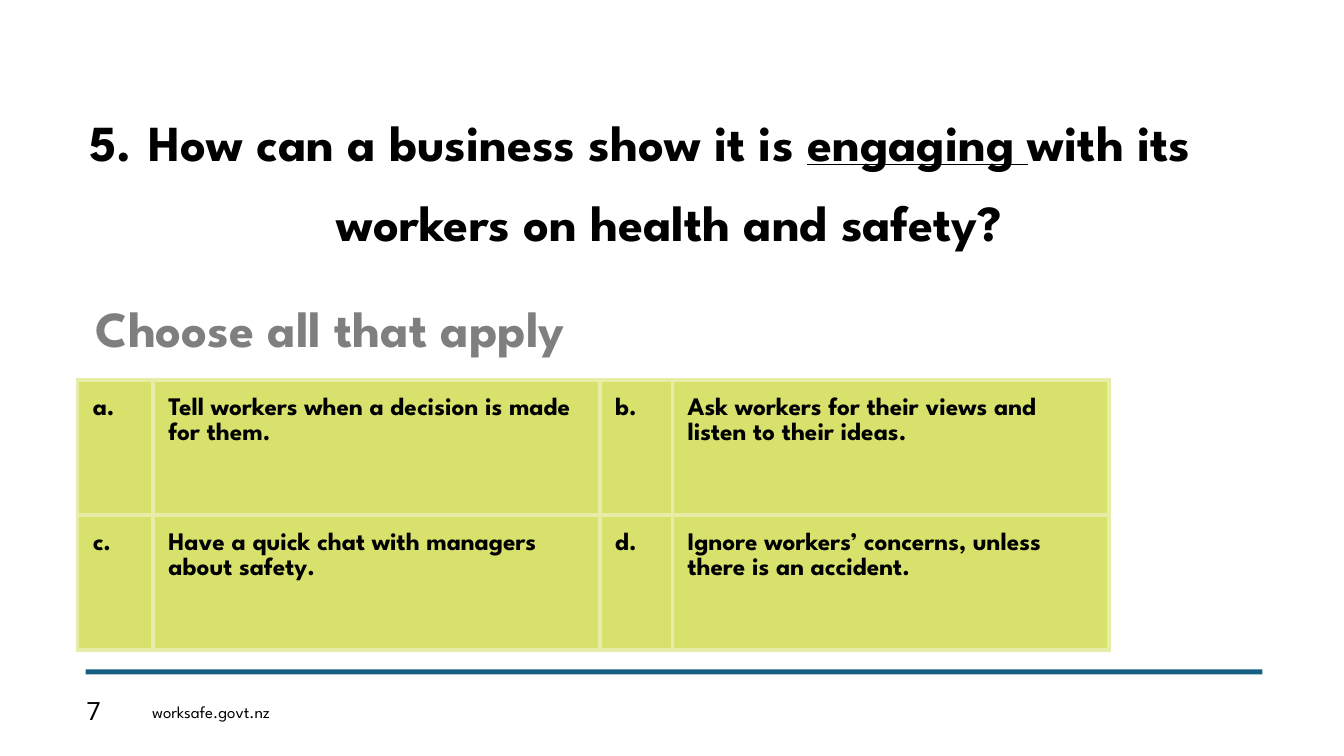
from dataclasses import dataclass

from lxml import etree
from pptx import Presentation
from pptx.dml.color import RGBColor
from pptx.enum.shapes import MSO_SHAPE
from pptx.enum.text import MSO_ANCHOR, PP_ALIGN
from pptx.oxml.ns import qn
from pptx.util import Emu, Pt

RECTANGLE = MSO_SHAPE.RECTANGLE
TOP, MIDDLE = MSO_ANCHOR.TOP, MSO_ANCHOR.MIDDLE
LEFT, CENTER = PP_ALIGN.LEFT, PP_ALIGN.CENTER
EMU_PER_PX = 9144
TITLE_ONLY = 5


@dataclass(frozen=True)
class Theme:
    """Colours, fonts and type sizes of the quiz slide."""
    text: str = "000000"
    prompt: str = "7F7F7F"
    rule: str = "156082"
    cell: str = "D7E16C"
    border: str = "E7EDA7"
    font: str = "League Spartan"
    number_font: str = "Roboto"
    heading_size: int = 36
    answer_size: int = 18
    footer_size: int = 12
    heading_spacing: float = 1.32
    answer_spacing: float = 1.1
    border_width: int = 3


THEME = Theme()
QUESTION = (
    ("How can a business show it is ", False),
    ("engaging ", True),
    ("with its workers on health and safety?", False),
)
ANSWERS = (
    ("a.", "Tell workers when a decision is made for them.",
     "b.", "Ask workers for their views and listen to their ideas."),
    ("c.", "Have a quick chat with managers about safety.",
     "d.", "Ignore workers’ concerns, unless there is an accident."),
)


def px(length):
    """Turn whole pixels into EMU."""
    return Emu(length * EMU_PER_PX)


def set_attributes(target, values):
    """Set every named attribute of an object."""
    for name, value in values.items():
        setattr(target, name, value)


def set_font(font, size, color=THEME.text, name=THEME.font, bold=False):
    """Format a font from the theme."""
    set_attributes(font, {"name": name, "size": Pt(size), "bold": bold})
    font.color.rgb = RGBColor.from_string(color)


def add_number_bullet(paragraph, start, indent):
    """Number a paragraph with a hanging indent."""
    properties = paragraph._p.get_or_add_pPr()
    properties.set("marL", str(px(indent)))
    properties.set("indent", str(-px(indent)))
    etree.SubElement(properties, qn("a:buFont"), typeface=THEME.font)
    etree.SubElement(properties, qn("a:buAutoNum"),
                     type="arabicPeriod", startAt=str(start))


def add_question(slide):
    """Place the numbered question in the title placeholder."""
    title = slide.shapes.title
    set_attributes(title, {"left": px(77), "top": px(105),
                           "width": px(1115), "height": px(131)})
    frame = title.text_frame
    set_attributes(frame, {"word_wrap": True, "vertical_anchor": MIDDLE,
                           "margin_left": 0, "margin_right": 0,
                           "margin_top": 0, "margin_bottom": 0})
    paragraph = frame.paragraphs[0]
    set_attributes(paragraph, {"alignment": CENTER,
                               "line_spacing": THEME.heading_spacing})
    add_number_bullet(paragraph, start=5, indent=59)
    for text, underlined in QUESTION:
        run = paragraph.add_run()
        run.text = text
        set_font(run.font, THEME.heading_size, bold=True)
        run.font.underline = underlined


def add_text(slide, text, box, size, anchor=MIDDLE, spacing=1.0, **font):
    """Add a left-aligned line of text."""
    shape = slide.shapes.add_textbox(*map(px, box))
    frame = shape.text_frame
    set_attributes(frame, {"word_wrap": True, "vertical_anchor": anchor})
    paragraph = frame.paragraphs[0]
    set_attributes(paragraph, {"alignment": LEFT, "line_spacing": spacing})
    run = paragraph.add_run()
    run.text = text
    set_font(run.font, size, **font)


def add_rule(slide, box):
    """Add the footer bar."""
    shape = slide.shapes.add_shape(RECTANGLE, *map(px, box))
    shape.shadow.inherit = False
    shape.fill.solid()
    shape.fill.fore_color.rgb = RGBColor.from_string(THEME.rule)
    shape.line.fill.background()


def add_borders(cell):
    """Draw all four borders of a cell."""
    properties = cell._tc.get_or_add_tcPr()
    for side in ("lnL", "lnR", "lnT", "lnB"):
        line = etree.SubElement(properties, qn(f"a:{side}"),
                                w=str(Pt(THEME.border_width)))
        fill = etree.SubElement(line, qn("a:solidFill"))
        etree.SubElement(fill, qn("a:srgbClr"), val=THEME.border)


def format_cell(cell, text):
    """Fill one answer cell."""
    add_borders(cell)
    cell.fill.solid()
    cell.fill.fore_color.rgb = RGBColor.from_string(THEME.cell)
    for side in ("left", "right", "top", "bottom"):
        setattr(cell, f"margin_{side}", px(15))
    cell.vertical_anchor = TOP
    paragraph = cell.text_frame.paragraphs[0]
    paragraph.line_spacing = THEME.answer_spacing
    run = paragraph.add_run()
    run.text = text
    set_font(run.font, THEME.answer_size, bold=True)


def add_answers(slide, left, top, widths, row_height):
    """Add the table of lettered answers."""
    table = slide.shapes.add_table(
        len(ANSWERS), len(widths), px(left), px(top),
        px(sum(widths)), px(row_height * len(ANSWERS))).table
    set_attributes(table, {"first_row": False, "horz_banding": False})
    for column, width in zip(table.columns, widths):
        column.width = px(width)
    for row, answers in zip(table.rows, ANSWERS):
        row.height = px(row_height)
        for cell, text in zip(row.cells, answers):
            format_cell(cell, text)


def main():
    """Build and save the quiz slide."""
    presentation = Presentation()
    set_attributes(presentation, {"slide_width": px(1333),
                                  "slide_height": px(750)})
    slide = presentation.slides.add_slide(
        presentation.slide_layouts[TITLE_ONLY])
    add_text(slide, "7", (76, 685, 65, 40), THEME.answer_size,
             name=THEME.number_font)
    add_text(slide, "worksafe.govt.nz", (141, 688, 450, 36),
             THEME.footer_size)
    add_rule(slide, (85, 664, 1167, 5))
    add_question(slide)
    add_text(slide, "Choose all that apply", (85, 271, 666, 71),
             THEME.heading_size, anchor=TOP, spacing=THEME.heading_spacing,
             color=THEME.prompt, bold=True)
    add_answers(slide, left=77, top=377, widths=(75, 443, 72, 433),
                row_height=134)
    presentation.save("out.pptx")


if __name__ == "__main__":
    main()
